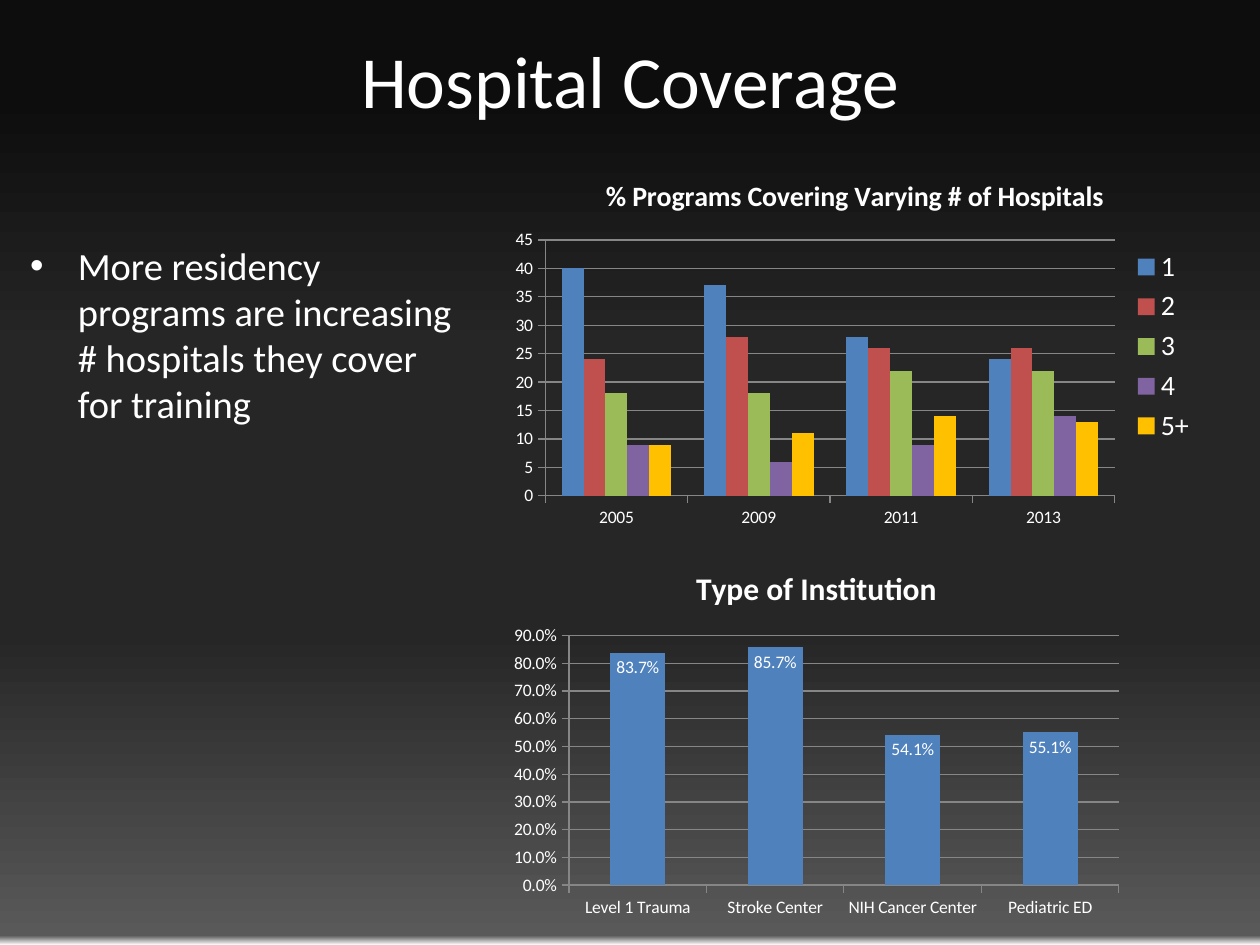
from dataclasses import dataclass

from lxml import etree
from pptx import Presentation
from pptx.chart.data import CategoryChartData
from pptx.dml.color import RGBColor
from pptx.enum.chart import (XL_CHART_TYPE, XL_LABEL_POSITION,
                             XL_LEGEND_POSITION, XL_TICK_MARK)
from pptx.enum.text import MSO_ANCHOR, MSO_AUTO_SIZE, PP_ALIGN
from pptx.oxml.ns import qn
from pptx.util import Inches, Pt

COLUMN = XL_CHART_TYPE.COLUMN_CLUSTERED
RIGHT = XL_LEGEND_POSITION.RIGHT
IN_END = XL_LABEL_POSITION.INSIDE_END
OUT, NONE = XL_TICK_MARK.OUTSIDE, XL_TICK_MARK.NONE
MIDDLE, CENTER = MSO_ANCHOR.MIDDLE, PP_ALIGN.CENTER
GROW = MSO_AUTO_SIZE.SHAPE_TO_FIT_TEXT

WIDE, HIGH = Inches(10), Inches(7.5)
COLS, ROWS = 100, 75


@dataclass(frozen=True)
class Theme:
    font: str = "Calibri"
    text: str = "FFFFFF"
    grid: str = "868686"
    bars: tuple = ("4F81BD", "C0504D", "9BBB59", "8064A2", "FFC000")
    fade: tuple = ((10, "0D0D0D"), (37, "262626"), (67, "262626"),
                   (99, "595959"), (100, "FFFFFF"))
    title: int = 42
    body: int = 22
    legend: int = 16
    axis: int = 10


THEME = Theme()


def place(box):
    """Turn columns and rows of the grid into lengths."""
    x, y, w, h = box
    return (int(WIDE * x / COLS), int(HIGH * y / ROWS),
            int(WIDE * w / COLS), int(HIGH * h / ROWS))


def assign(item, **values):
    for name, value in values.items():
        setattr(item, name, value)


def style(font, size, bold=False):
    assign(font, name=THEME.font, size=Pt(size), bold=bold)
    font.color.rgb = RGBColor.from_string(THEME.text)


def paint(fill, color):
    fill.solid()
    fill.fore_color.rgb = RGBColor.from_string(color)


def add_fade(slide):
    """Fill the background from top to bottom."""
    fill = slide.background.fill
    fill.gradient()
    fill.gradient_angle = 270
    stops = next(slide.element.iter(qn("a:gsLst")))
    for stop in list(stops):
        stops.remove(stop)
    for share, color in THEME.fade:
        stop = etree.SubElement(stops, qn("a:gs"), pos=str(share * 1000))
        etree.SubElement(stop, qn("a:srgbClr"), val=color)


def add_title(slide, box, text):
    title = slide.shapes.title
    assign(title, **dict(zip(("left", "top", "width", "height"), place(box))))
    frame = title.text_frame
    assign(frame, text=text, vertical_anchor=MIDDLE)
    line = frame.paragraphs[0]
    line.alignment = CENTER
    style(line.runs[0].font, THEME.title)


def add_point(slide, box, text):
    frame = slide.shapes.add_textbox(*place(box)).text_frame
    assign(frame, text=text, word_wrap=True, auto_size=GROW)
    line = frame.paragraphs[0]
    style(line.runs[0].font, THEME.body)
    # Bullet with a hanging indent
    props = line._p.get_or_add_pPr()
    hang = Inches(0.38)
    props.set("marL", str(hang))
    props.set("indent", str(-hang))
    etree.SubElement(props, qn("a:buFont"), typeface="Arial")
    etree.SubElement(props, qn("a:buChar"), char="•")


def add_bars(slide, box, title, size, cats, series, top, step, form="General"):
    data = CategoryChartData(number_format=form)
    data.categories = cats
    for name, values in series.items():
        data.add_series(name, values)
    chart = slide.shapes.add_chart(COLUMN, *place(box), data).chart
    style(chart.font, THEME.axis)

    # Heading
    frame = chart.chart_title.text_frame
    frame.text = title
    style(frame.paragraphs[0].runs[0].font, size, True)
    chart.chart_title.include_in_layout = False

    # Axes and grid
    scale = chart.value_axis
    assign(scale, minimum_scale=0, maximum_scale=top, major_unit=step,
           has_major_gridlines=True)
    assign(scale.tick_labels, number_format=form, number_format_is_linked=False)
    for axis in (chart.category_axis, scale):
        assign(axis, major_tick_mark=OUT, minor_tick_mark=NONE)
        style(axis.tick_labels.font, THEME.axis)
    for part in (chart.category_axis, scale, scale.major_gridlines):
        paint(part.format.line.fill, THEME.grid)
        part.format.line.width = Pt(0.75)

    # Columns
    plot = chart.plots[0]
    assign(plot, gap_width=150, overlap=0, vary_by_categories=False)
    for bar, color in zip(plot.series, THEME.bars):
        paint(bar.format.fill, color)
    chart.has_legend = False
    return chart


def add_legend(chart):
    chart.has_legend = True
    assign(chart.legend, position=RIGHT, include_in_layout=False)
    style(chart.legend.font, THEME.legend)


def add_labels(chart, form):
    plot = chart.plots[0]
    plot.has_data_labels = True
    labels = plot.data_labels
    assign(labels, show_value=True, position=IN_END, number_format=form,
           number_format_is_linked=False)
    style(labels.font, THEME.axis)


def main():
    deck = Presentation()
    assign(deck, slide_width=WIDE, slide_height=HIGH)
    slide = deck.slides.add_slide(deck.slide_layouts[5])
    add_fade(slide)
    add_title(slide, (5, 0, 90, 12.5), "Hospital Coverage")
    add_point(slide, (1.4, 18.7, 36.7, 15.8),
              "More residency programs are increasing # hospitals "
              "they cover for training")

    # Hospitals covered by year
    cover = {"1": (40, 37, 28, 24), "2": (24, 28, 26, 26),
             "3": (18, 18, 22, 22), "4": (9, 6, 9, 14),
             "5+": (9, 11, 14, 13)}
    chart = add_bars(slide, (39.8, 12.5, 56.1, 30),
                     "% Programs Covering Varying # of Hospitals", 16,
                     ("2005", "2009", "2011", "2013"), cover, 45, 5)
    add_legend(chart)

    # Share of each institution type
    form = "0.0%"
    chart = add_bars(slide, (39.8, 43.4, 50, 30), "Type of Institution", 18,
                     ("Level 1 Trauma", "Stroke Center",
                      "NIH Cancer Center", "Pediatric ED"),
                     {"Series 1": (0.837, 0.857, 0.541, 0.551)},
                     0.9, 0.1, form)
    add_labels(chart, form)
    deck.save("out.pptx")


if __name__ == "__main__":
    main()
